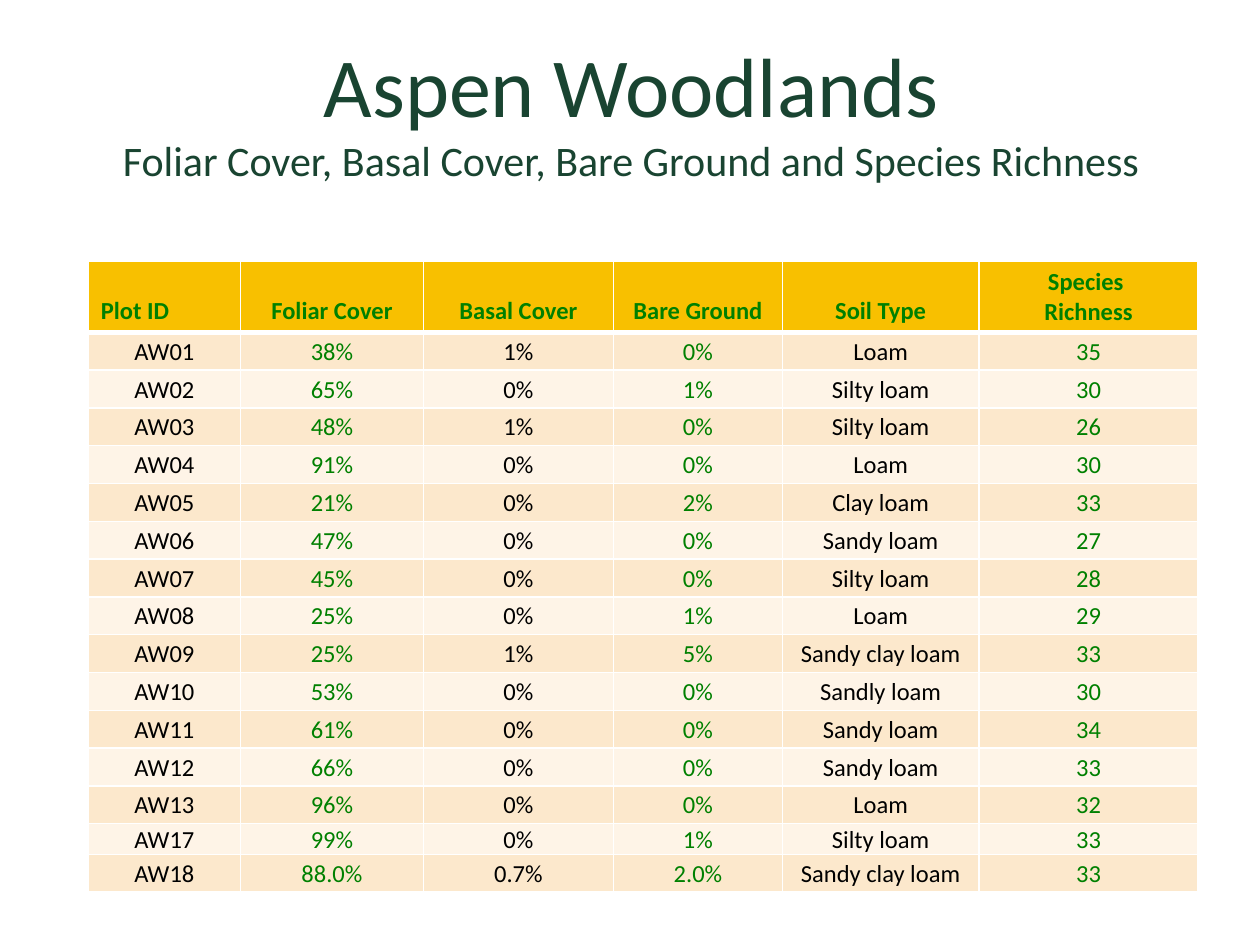
from lxml import etree
from pptx import Presentation
from pptx.dml.color import RGBColor
from pptx.enum import text
from pptx.oxml import ns
from pptx.util import Inches, Pt

FONT = "Calibri"
PINE = RGBColor(0x19, 0x44, 0x31)
GREEN = RGBColor(0x00, 0x80, 0x00)
BLACK = RGBColor(0x00, 0x00, 0x00)
WHITE = RGBColor(0xFF, 0xFF, 0xFF)
GOLD = RGBColor(0xF8, 0xC0, 0x00)
BANDS = RGBColor(0xFC, 0xE8, 0xCC), RGBColor(0xFE, 0xF4, 0xE7)

COLUMN_WIDTHS = [1.21, 1.45, 1.51, 1.34, 1.56, 1.74]
HEADER_HEIGHT, ROW_HEIGHT, SHORT_ROW_HEIGHT = 0.56, 0.3, 0.24
SHORT_PLOT = "AW17"
BODY_COLORS = [BLACK, GREEN, BLACK, GREEN, BLACK, GREEN]
HEADERS = ["Plot ID", "Foliar Cover", "Basal Cover", "Bare Ground",
           "Soil Type", "Species \nRichness"]
PLOTS = [
    ["AW01", "38%", "1%", "0%", "Loam", "35"],
    ["AW02", "65%", "0%", "1%", "Silty loam", "30"],
    ["AW03", "48%", "1%", "0%", "Silty loam", "26"],
    ["AW04", "91%", "0%", "0%", "Loam", "30"],
    ["AW05", "21%", "0%", "2%", "Clay loam", "33"],
    ["AW06", "47%", "0%", "0%", "Sandy loam", "27"],
    ["AW07", "45%", "0%", "0%", "Silty loam", "28"],
    ["AW08", "25%", "0%", "1%", "Loam", "29"],
    ["AW09", "25%", "1%", "5%", "Sandy clay loam", "33"],
    ["AW10", "53%", "0%", "0%", "Sandly loam", "30"],
    ["AW11", "61%", "0%", "0%", "Sandy loam", "34"],
    ["AW12", "66%", "0%", "0%", "Sandy loam", "33"],
    ["AW13", "96%", "0%", "0%", "Loam", "32"],
    ["AW17", "99%", "0%", "1%", "Silty loam", "33"],
    ["AW18", "88.0%", "0.7%", "2.0%", "Sandy clay loam", "33"],
]


def add_run(p, words, size, color, bold=False):
    r = p.add_run()
    r.text = words
    r.font.name, r.font.size, r.font.bold = FONT, Pt(size), bold
    r.font.color.rgb = color


def add_title(s):
    sp = s.shapes.add_textbox(Inches(0.23), Inches(0.09), Inches(9.56), Inches(1.55))
    tf = sp.text_frame
    tf.word_wrap = True
    tf.vertical_anchor = text.MSO_ANCHOR.MIDDLE
    p = tf.paragraphs[0]
    p.alignment = text.PP_ALIGN.CENTER
    add_run(p, "Aspen Woodlands", 48, PINE)
    p.add_line_break()
    add_run(p, "Foliar Cover, Basal Cover, Bare Ground and Species Richness", 24, PINE)


def set_borders(cell, bottom):
    """White lines of 1 pt, with the bottom one as given in points."""
    tc_pr = cell._tc.get_or_add_tcPr()
    for side, width in zip("LRTB", (1, 1, 1, bottom)):
        line = etree.SubElement(tc_pr, ns.qn(f"a:ln{side}"), w=str(Pt(width)))
        fill = etree.SubElement(line, ns.qn("a:solidFill"))
        etree.SubElement(fill, ns.qn("a:srgbClr"), val=str(WHITE))


def set_margins(cell, left, top, right, bottom):
    cell.margin_left, cell.margin_top = Inches(left), Inches(top)
    cell.margin_right, cell.margin_bottom = Inches(right), Inches(bottom)


def fill_cell(cell, words, fill, color, align, anchor, bold=False, bottom=1):
    set_borders(cell, bottom)
    cell.fill.solid()
    cell.fill.fore_color.rgb = fill
    cell.vertical_anchor = anchor
    tf = cell.text_frame
    for i, line in enumerate(words.split("\n")):
        p = tf.add_paragraph() if i else tf.paragraphs[0]
        p.alignment = align
        add_run(p, line, 14, color, bold)


def add_plot_table(s):
    heights = [HEADER_HEIGHT] + [
        SHORT_ROW_HEIGHT if plot[0] == SHORT_PLOT else ROW_HEIGHT for plot in PLOTS]
    table = s.shapes.add_table(
        len(heights), len(COLUMN_WIDTHS), Inches(0.7), Inches(2.07),
        Inches(sum(COLUMN_WIDTHS)), Inches(sum(heights))).table
    table.horz_banding = False
    for column, width in zip(table.columns, COLUMN_WIDTHS):
        column.width = Inches(width)
    for row, height in zip(table.rows, heights):
        row.height = Inches(height)

    for col, header in enumerate(HEADERS):
        cell = table.cell(0, col)
        align = text.PP_ALIGN.CENTER if col else text.PP_ALIGN.LEFT
        fill_cell(cell, header, GOLD, GREEN, align, text.MSO_ANCHOR.BOTTOM,
                  bold=True, bottom=3)
        side = 0.1 if col < 2 else 0.05
        set_margins(cell, side, 0.05, side, 0.05)
    for row, plot in enumerate(PLOTS, 1):
        for col, value in enumerate(plot):
            cell = table.cell(row, col)
            fill_cell(cell, value, BANDS[(row - 1) % 2], BODY_COLORS[col],
                      text.PP_ALIGN.CENTER, text.MSO_ANCHOR.MIDDLE)
            set_margins(cell, 0.01, 0.01, 0.01, 0)


def main():
    prs = Presentation()
    prs.slide_width, prs.slide_height = Inches(10), Inches(7.5)
    s = prs.slides.add_slide(prs.slide_layouts[6])
    add_title(s)
    add_plot_table(s)
    prs.save("out.pptx")


if __name__ == "__main__":
    main()
